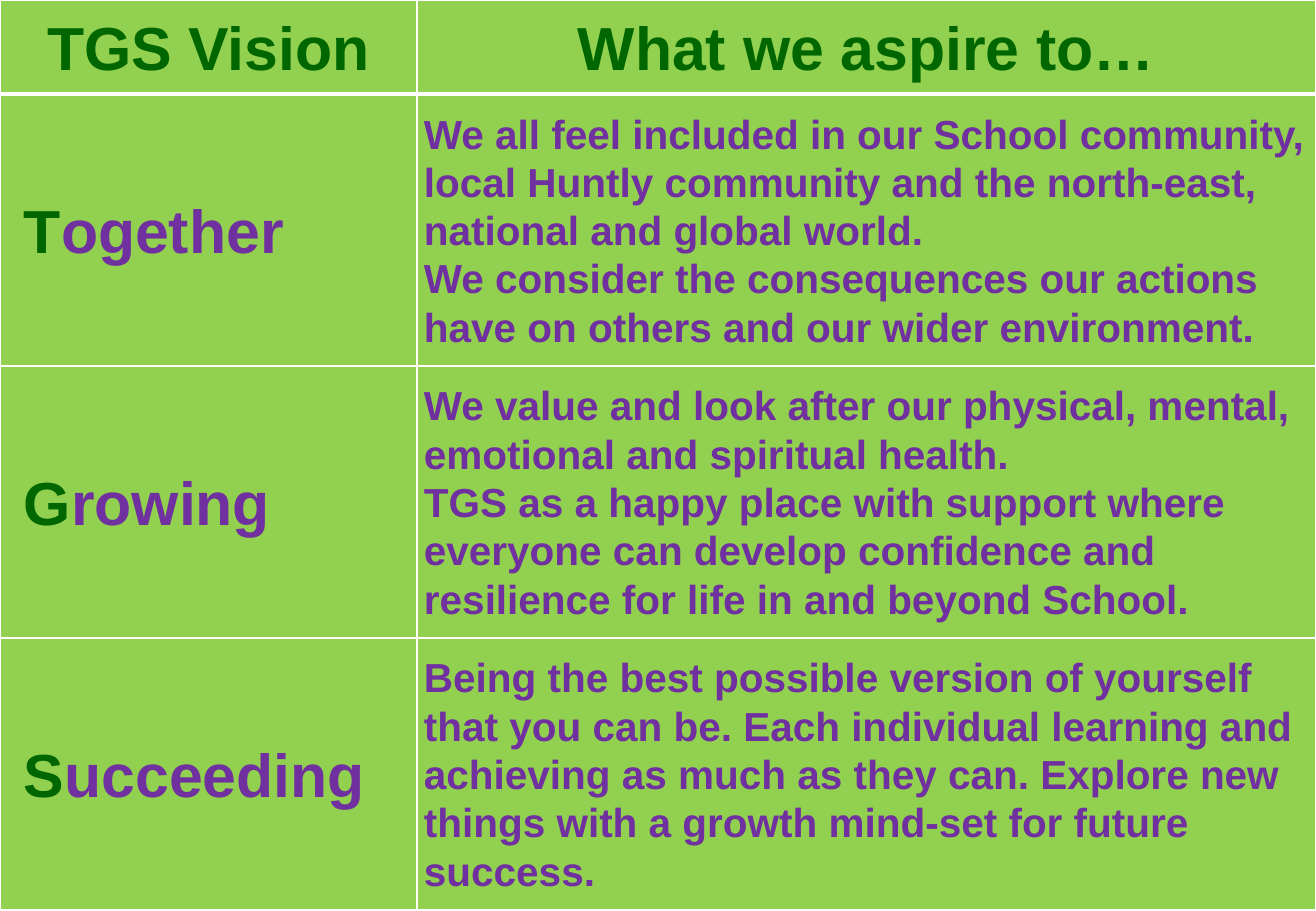
from pptx import Presentation
from pptx.dml.color import RGBColor
from pptx.enum.text import MSO_ANCHOR as Anchor, PP_ALIGN as Align
from pptx.oxml import parse_xml
from pptx.oxml.ns import nsdecls
from pptx.util import Pt

PX = 7526
WIDTH, HEIGHT = 1316, 911
COLUMNS = [417, 899]
ROWS = [94, 272, 272, 272]
GREEN, PURPLE, LIME, WHITE = "006600", "7030A0", "92D050", "FFFFFF"

HEADINGS = ["TGS Vision", "What we aspire to…"]
VISION = [
    ("Together", [
        "We all feel included in our School community, local Huntly community "
        "and the north-east, national and global world.",
        "We consider the consequences our actions have on others and our wider environment.",
    ]),
    ("Growing", [
        "We value and look after our physical, mental, emotional and spiritual health.",
        "TGS as a happy place with support where everyone can develop confidence "
        "and resilience for life in and beyond School.",
    ]),
    ("Succeeding", [
        "Being the best possible version of yourself that you can be. Each individual "
        "learning and achieving as much as they can. Explore new things with a growth "
        "mind-set for future success.",
    ]),
]


def paint(colour_format, value):
    colour_format.rgb = RGBColor.from_string(value)


def write(cell, paragraphs, size, align=Align.LEFT):
    for number, runs in enumerate(paragraphs):
        frame = cell.text_frame
        paragraph = frame.add_paragraph() if number else frame.paragraphs[0]
        paragraph.alignment = align
        paragraph.line_spacing = 1.07
        for words, colour in runs:
            run = paragraph.add_run()
            run.text = words
            for key, value in {"name": "Arial", "size": Pt(size), "bold": True}.items():
                setattr(run.font, key, value)
            paint(run.font.color, colour)


deck = Presentation()
deck.slide_width, deck.slide_height = WIDTH * PX, HEIGHT * PX
slide = deck.slides.add_slide(deck.slide_layouts[6])
slide.background.fill.solid()
paint(slide.background.fill.fore_color, "F0FFF0")

vision = slide.shapes.add_table(
    len(ROWS), len(COLUMNS), 0, 0, WIDTH * PX, sum(ROWS) * PX).table
for column, width in zip(vision.columns, COLUMNS):
    column.width = width * PX
for row, height in zip(vision.rows, ROWS):
    row.height = height * PX

for row_number, row in enumerate(vision.rows):
    for cell in row.cells:
        layout = {"margin_left": 7 * PX, "margin_right": 7 * PX, "margin_top": 0,
                  "margin_bottom": 0, "vertical_anchor": Anchor.MIDDLE}
        for key, value in layout.items():
            setattr(cell, key, value)
        edges = {"L": 1, "R": 1, "T": 3 if row_number == 1 else 1,
                 "B": 3 if row_number == 0 else 1}
        for edge, points in edges.items():
            cell._tc.get_or_add_tcPr().append(parse_xml(
                f'<a:ln{edge} {nsdecls("a")} w="{Pt(points)}"><a:solidFill>'
                f'<a:srgbClr val="{WHITE}"/></a:solidFill></a:ln{edge}>'))
        cell.fill.solid()
        paint(cell.fill.fore_color, LIME)

for column_number, heading in enumerate(HEADINGS):
    write(vision.cell(0, column_number), [[(heading, GREEN)]], 36, Align.CENTER)

for row_number, (value_word, aspirations) in enumerate(VISION, 1):
    value_cell = vision.cell(row_number, 0)
    value_cell.margin_left = 24 * PX
    write(value_cell, [[(value_word[0], GREEN), (value_word[1:], PURPLE)]], 36)
    write(vision.cell(row_number, 1), [[(line, PURPLE)] for line in aspirations], 24)

deck.save("out.pptx")
